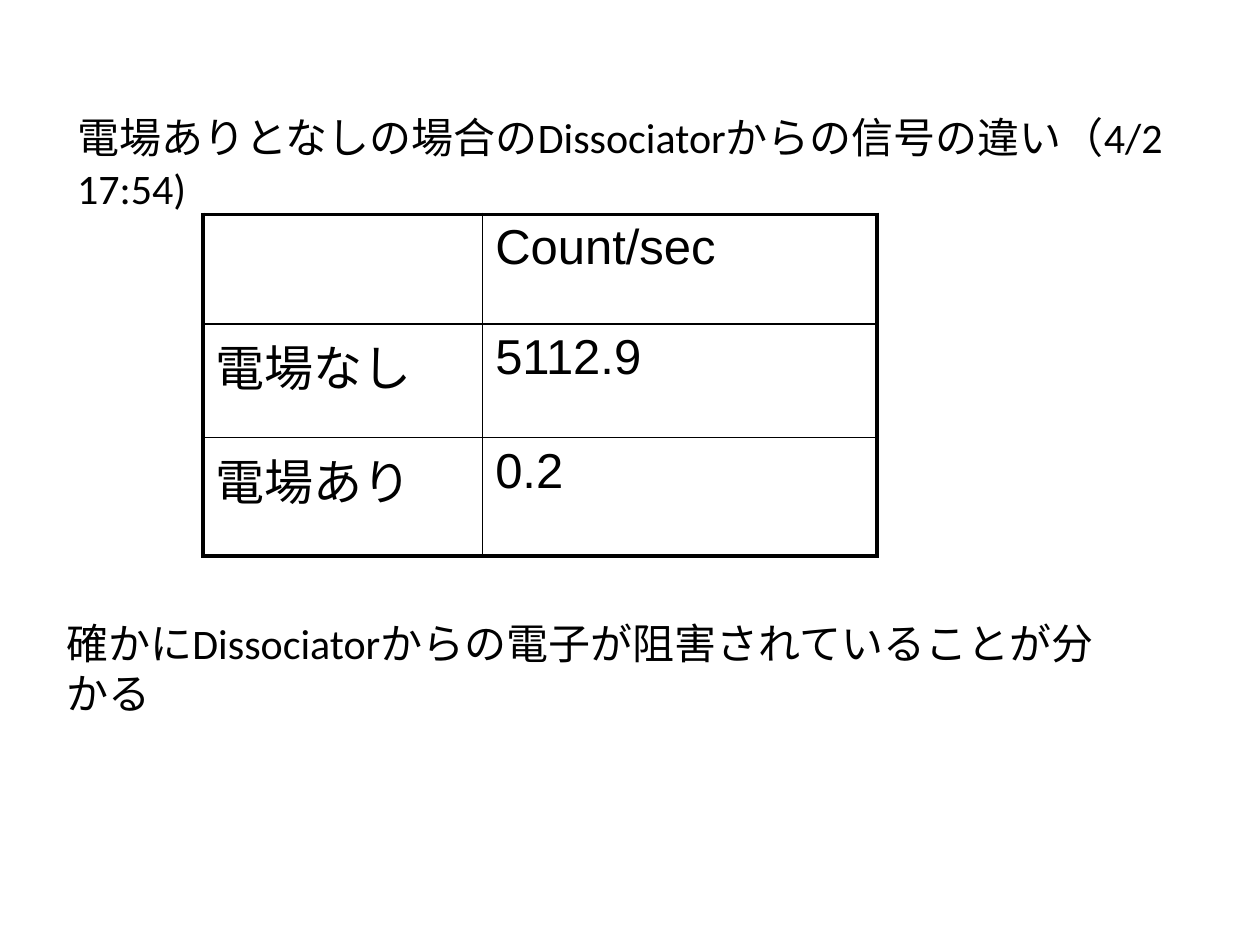
from lxml.etree import SubElement
from pptx import Presentation
from pptx.dml.color import RGBColor
from pptx.enum.text import MSO_ANCHOR, MSO_AUTO_SIZE, PP_ALIGN
from pptx.oxml.ns import qn
from pptx.util import Cm, Pt

BLACK = RGBColor(0, 0, 0)
THIN, THICK = Pt(1), Pt(2.25)
COLS = (5.64, 7.95)
ROWS = (2.21, 2.29, 2.39)
DATA = (("", "Count/sec"), ("電場なし", "5112.9"), ("電場あり", "0.2"))


def write(frame, text, size=24, font="Calibri", color=BLACK):
    """Put formatted, left-aligned text at the top of a frame."""
    frame.word_wrap = True
    frame.vertical_anchor = MSO_ANCHOR.TOP
    para = frame.paragraphs[0]
    para.alignment = PP_ALIGN.LEFT
    para.font.size = Pt(size)
    if text:
        run = para.add_run()
        run.text = text
        run.font.size = Pt(size)
        run.font.name = font
        run.font.color.rgb = color


def place(shape, left, top, width, height):
    """Set the position and size of a shape in centimetres."""
    shape.left, shape.top = Cm(left), Cm(top)
    shape.width, shape.height = Cm(width), Cm(height)


def add_title(slide, text):
    """Move and fill the title placeholder."""
    title = slide.shapes.title
    place(title, 1.3, 2.13, 24.08, 1.27)
    title.text_frame.auto_size = MSO_AUTO_SIZE.NONE
    write(title.text_frame, text)


def add_note(slide, text):
    """Add the closing remark below the table."""
    box = slide.shapes.add_textbox(Cm(1.09), Cm(12.32), Cm(22), Cm(2.29))
    write(box.text_frame, text)


def add_edge(cell, side, width):
    """Draw one border of a cell."""
    props = cell._tc.get_or_add_tcPr()
    line = SubElement(props, qn(f"a:ln{side}"), w=str(width))
    fill = SubElement(line, qn("a:solidFill"))
    SubElement(fill, qn("a:srgbClr"), val=str(BLACK))


def add_grid(slide):
    """Add the count table with a thick frame and thin inner lines."""
    frame = slide.shapes.add_table(
        len(ROWS), len(COLS), Cm(4.09), Cm(4.32), Cm(sum(COLS)), Cm(sum(ROWS)))
    table = frame.table
    table.first_row = table.horz_banding = False
    for col, width in zip(table.columns, COLS):
        col.width = Cm(width)
    for row, height in zip(table.rows, ROWS):
        row.height = Cm(height)
    for r, line in enumerate(DATA):
        for c, text in enumerate(line):
            cell = table.cell(r, c)
            write(cell.text_frame, text, size=28, font="Arial")
            outer = {"L": c == 0, "R": c == len(COLS) - 1,
                     "T": r == 0, "B": r == len(ROWS) - 1}
            for side, thick in outer.items():
                add_edge(cell, side, THICK if thick else THIN)
            cell.fill.background()


def main():
    """Build and save the slide."""
    deck = Presentation()
    deck.slide_width, deck.slide_height = Cm(25.4), Cm(19.05)
    slide = deck.slides.add_slide(deck.slide_layouts[5])
    add_title(slide, "電場ありとなしの場合のDissociatorからの信号の違い（4/2 17:54)")
    add_grid(slide)
    add_note(slide, "確かにDissociatorからの電子が阻害されていることが分かる")
    deck.save("out.pptx")


if __name__ == "__main__":
    main()
